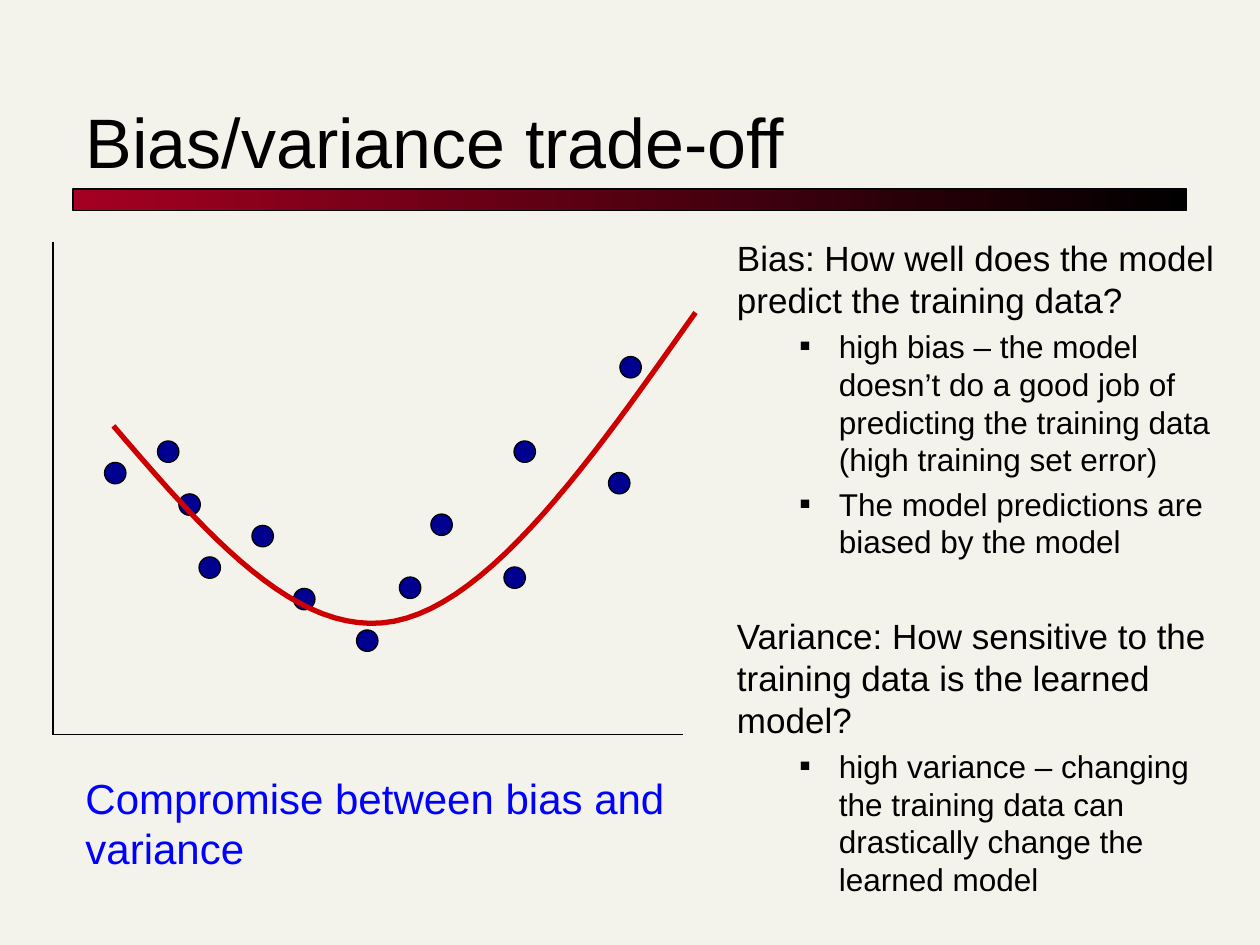
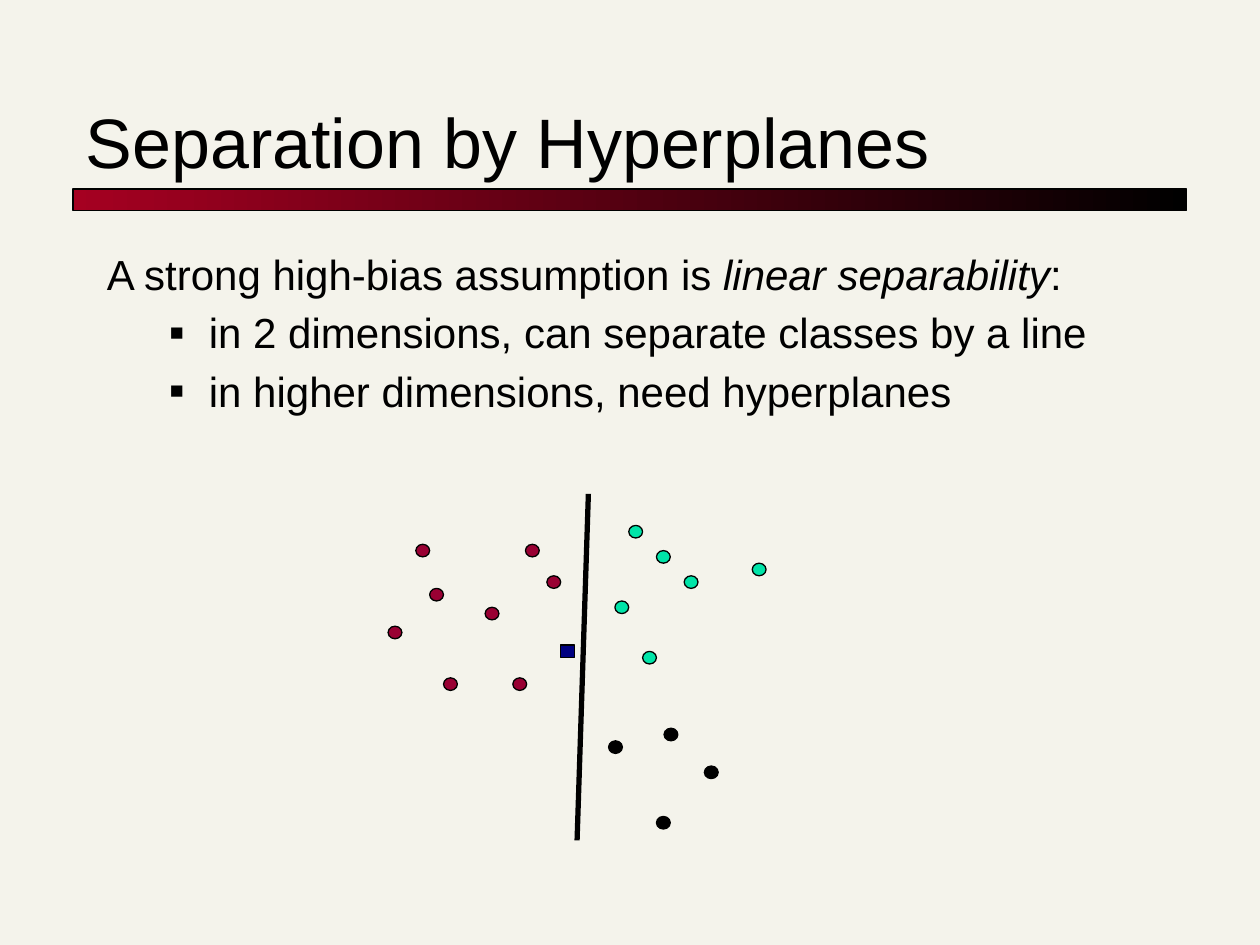
from dataclasses import dataclass

from lxml import etree
from pptx import Presentation
from pptx.dml.color import RGBColor
from pptx.enum import shapes, text
from pptx.oxml.ns import qn
from pptx.util import Inches, Pt


@dataclass(frozen=True)
class Theme:
    font: str = "Arial"
    background: str = "F4F3EB"
    ink: str = "000000"
    band_start: str = "A50021"
    sample: str = "000090"
    curve: str = "CC0000"
    caption: str = "0000FF"
    red_class: str = "990033"
    green_class: str = "00E4A8"
    query: str = "000080"
    title_size: int = 40
    large: int = 24
    medium: int = 20
    small: int = 18
    thin: float = 0.75
    thick: float = 3


THEME = Theme()
OVAL = shapes.MSO_SHAPE.OVAL
RECTANGLE = shapes.MSO_SHAPE.RECTANGLE
TITLE_BOX = (0.58, 0.42, 8.83, 1.08)
BAND_BOX = (0.58, 1.5, 8.84, 0.17)

# Top-left corners of the dots, relative to the plot's box
SAMPLES = [(0.41, 1.75), (0.83, 1.58), (1, 2), (1.16, 2.5), (1.58, 2.25),
           (1.91, 2.75), (2.41, 3.08), (2.75, 2.66), (3, 2.16), (3.58, 2.58),
           (3.66, 1.58), (4.41, 1.83), (4.5, 0.91)]
FIT_CURVE = [((0.48, 1.46), (1.21, 2.31), (1.94, 3.16), (2.71, 3.01)),
             ((2.71, 3.01), (3.48, 2.86), (4.29, 1.71), (5.1, 0.56))]
CLASSES = {
    THEME.red_class: [(0.22, 0.4), (0.33, 0.75), (0.44, 1.46), (1.09, 0.4),
                      (0, 1.05), (0.77, 0.9), (1.26, 0.65), (0.99, 1.46)],
    THEME.green_class: [(1.8, 0.85), (1.91, 0.25), (2.02, 1.25),
                        (2.13, 0.45), (2.89, 0.55), (2.35, 0.65)],
    THEME.ink: [(2.19, 1.86), (1.75, 1.96), (2.13, 2.56), (2.51, 2.16)],
}


def color(value):
    return RGBColor.from_string(value)


def inches(values):
    return [Inches(value) for value in values]


def set_line(shape, value, width):
    shape.line.color.rgb = color(value)
    shape.line.width = Pt(width)


def add_outlined(slide, kind, box, fill=None):
    shape = slide.shapes.add_shape(kind, *inches(box))
    shape.shadow.inherit = False
    set_line(shape, THEME.ink, THEME.thin)
    if fill:
        shape.fill.solid()
        shape.fill.fore_color.rgb = color(fill)
    return shape


def add_line(slide, start, end, width):
    line = slide.shapes.add_connector(
        shapes.MSO_CONNECTOR.STRAIGHT, *inches(start + end))
    set_line(line, THEME.ink, width)
    etree.SubElement(line._element.spPr, qn("a:effectLst"))


def add_run(paragraph, words, size, value=THEME.ink, italic=False):
    run = paragraph.add_run()
    run.text = words
    run.font.name = THEME.font
    run.font.size = Pt(size)
    run.font.italic = italic
    run.font.color.rgb = color(value)


def add_bullet(paragraph):
    properties = paragraph._p.get_or_add_pPr()
    properties.set("marL", str(Inches(0.81)))
    properties.set("indent", str(Inches(-0.31)))
    bullet_color = etree.SubElement(properties, qn("a:buClr"))
    etree.SubElement(bullet_color, qn("a:srgbClr"), val=THEME.ink)
    etree.SubElement(properties, qn("a:buSzPct"), val="55000")
    etree.SubElement(properties, qn("a:buFont"), typeface=THEME.font)
    etree.SubElement(properties, qn("a:buChar"), char="■")


def add_text_frame(slide, box):
    frame = slide.shapes.add_textbox(*inches(box)).text_frame
    frame.word_wrap = True
    return frame


def add_outline(slide, box, items):
    """Items are (runs, size, bulleted, extra space before in points)."""
    frame = add_text_frame(slide, box)
    for index, (runs, size, bulleted, gap) in enumerate(items):
        paragraph = frame.add_paragraph() if index else frame.paragraphs[0]
        paragraph.space_before = Pt(0.2 * size + gap)
        if bulleted:
            add_bullet(paragraph)
        for words, italic in runs:
            add_run(paragraph, words, size, italic=italic)


def add_titled_slide(presentation, title):
    slide = presentation.slides.add_slide(presentation.slide_layouts[5])
    band = add_outlined(slide, RECTANGLE, BAND_BOX)
    band.fill.gradient()
    band.fill.gradient_angle = 0
    for stop, value in zip(band.fill.gradient_stops,
                           (THEME.band_start, THEME.ink)):
        stop.color.rgb = color(value)

    holder = slide.shapes.title
    holder.left, holder.top, holder.width, holder.height = inches(TITLE_BOX)
    frame = holder.text_frame
    frame.auto_size = text.MSO_AUTO_SIZE.NONE
    frame.vertical_anchor = text.MSO_ANCHOR.BOTTOM
    frame.paragraphs[0].alignment = text.PP_ALIGN.LEFT
    add_run(frame.paragraphs[0], title, THEME.title_size)
    return slide


def bezier_point(points, t):
    weights = ((1 - t) ** 3, 3 * t * (1 - t) ** 2, 3 * t ** 2 * (1 - t), t ** 3)
    return tuple(sum(weight * point[axis]
                     for weight, point in zip(weights, points))
                 for axis in (0, 1))


def add_fit_plot(slide, box):
    left, top, width, height = box
    corner = (left, top + height)
    add_line(slide, (left, top), corner, THEME.thin)
    add_line(slide, (left + width, top + height), corner, THEME.thin)
    for x, y in SAMPLES:
        add_outlined(slide, OVAL, (left + x, top + y, 0.17, 0.17), THEME.sample)

    steps = 24
    curve = [bezier_point(segment, step / steps)
             for segment in FIT_CURVE for step in range(steps + 1)]
    points = [inches((left + x, top + y)) for x, y in curve]
    builder = slide.shapes.build_freeform(*points[0])
    builder.add_line_segments(points[1:], close=False)
    shape = builder.convert_to_shape()
    shape.shadow.inherit = False
    shape.fill.background()
    set_line(shape, THEME.curve, THEME.thick)


def add_class_plot(slide, box):
    left, top, width, height = box

    def add_marker(kind, x, y, fill):
        add_outlined(slide, kind, (left + x, top + y, 0.11, 0.1), fill)

    for fill, corners in CLASSES.items():
        for x, y in corners:
            add_marker(OVAL, x, y, fill)
    add_marker(RECTANGLE, 1.37, 1.2, THEME.query)
    add_line(slide, (left + 1.59, top), (left + 1.5, top + height), THEME.thick)


def build_trade_off(presentation):
    slide = add_titled_slide(presentation, "Bias/variance trade-off")
    add_fit_plot(slide, (0.42, 1.92, 5, 3.91))
    caption = add_text_frame(slide, (0.58, 6.08, 5.33, 0.91))
    add_run(caption.paragraphs[0], "Compromise between bias and variance",
            THEME.large, THEME.caption)

    def question(words, gap=0):
        return [(words, False)], THEME.medium, False, gap

    def answer(words):
        return [(words, False)], THEME.small, True, 0

    add_outline(slide, (5.75, 1.83, 4.08, 5.33), [
        question("Bias: How well does the model predict the training data?"),
        answer("high bias – the model doesn’t do a good job of predicting "
               "the training data (high training set error)"),
        answer("The model predictions are biased by the model"),
        question("Variance: How sensitive to the training data is the "
                 "learned model?", gap=27),
        answer("high variance – changing the training data can drastically "
               "change the learned model"),
    ])


def build_hyperplanes(presentation):
    slide = add_titled_slide(presentation, "Separation by Hyperplanes")
    lead = [("A strong high-bias assumption is ", False),
            ("linear separability", True), (":", False)]
    cases = ["in 2 dimensions, can separate classes by a line",
             "in higher dimensions, need hyperplanes"]
    add_outline(slide, (0.75, 1.92, 8.5, 1.75),
                [(lead, THEME.large, False, 0)]
                + [([(case, False)], THEME.large, True, 0) for case in cases])
    add_class_plot(slide, (3.08, 3.92, 3, 2.75))


def main():
    presentation = Presentation()
    presentation.slide_width, presentation.slide_height = inches((10, 7.5))
    background = presentation.slide_master.background.fill
    background.solid()
    background.fore_color.rgb = color(THEME.background)
    build_trade_off(presentation)
    build_hyperplanes(presentation)
    presentation.save("out.pptx")


if __name__ == "__main__":
    main()
